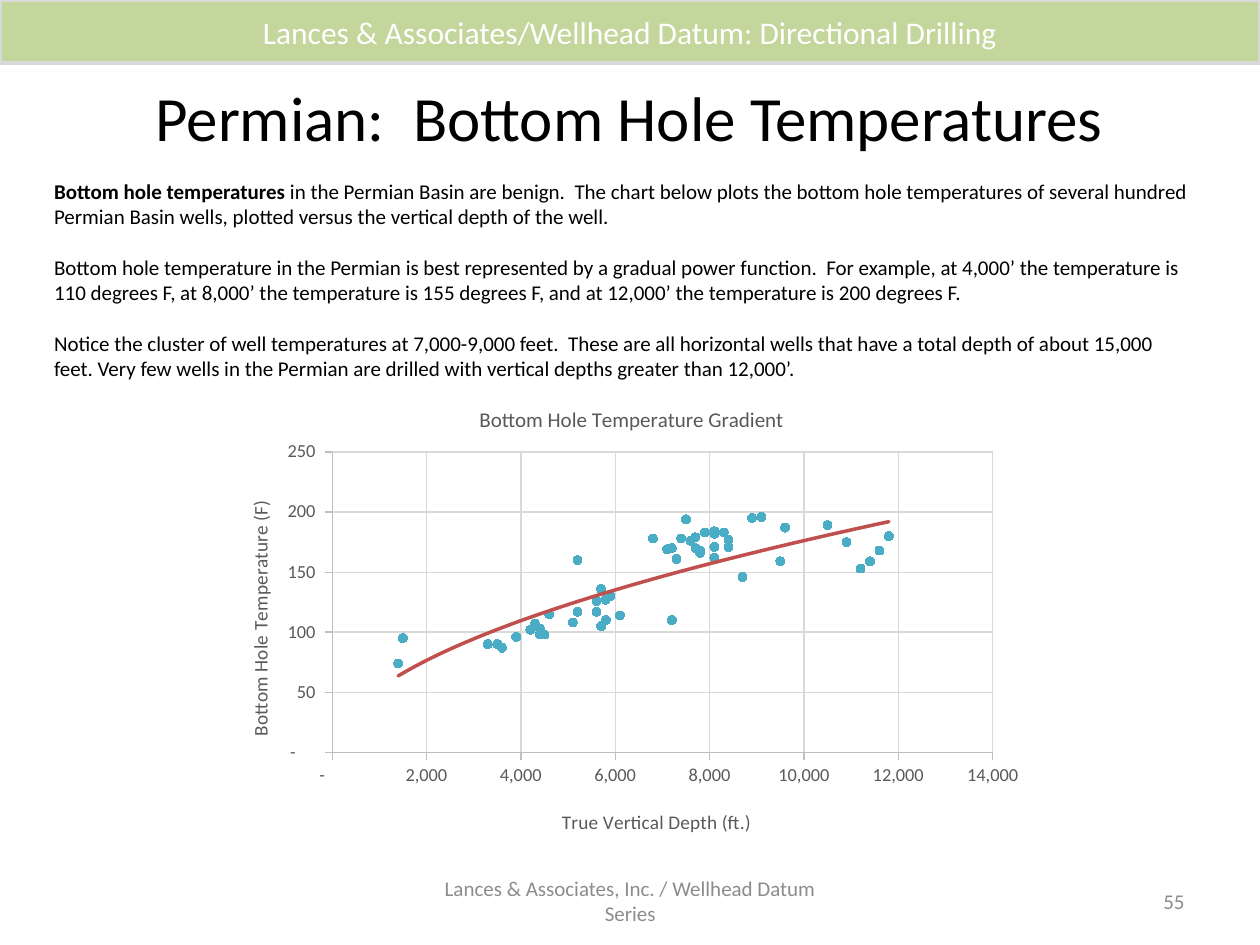
from lxml import etree
from pptx import Presentation
from pptx.chart.data import XyChartData
from pptx.dml.color import RGBColor
from pptx.enum.chart import XL_CHART_TYPE, XL_MARKER_STYLE, XL_TICK_MARK
from pptx.enum.shapes import MSO_SHAPE
from pptx.enum.text import MSO_ANCHOR, PP_ALIGN
from pptx.oxml import parse_xml
from pptx.oxml.ns import nsdecls, qn
from pptx.util import Cm, Pt

FONT = "Calibri"
BLACK = RGBColor(0x00, 0x00, 0x00)
WHITE = RGBColor(0xFF, 0xFF, 0xFF)
GREEN = RGBColor(0xC3, 0xD6, 0x9B)
TEAL = RGBColor(0x4B, 0xAC, 0xC6)
RED = RGBColor(0xC0, 0x50, 0x4D)
LABEL_GREY = RGBColor(0x59, 0x59, 0x59)
FOOTER_GREY = RGBColor(0x8C, 0x8C, 0x8C)
AXIS_GREY = RGBColor(0xBF, 0xBF, 0xBF)
GRID_GREY = RGBColor(0xD9, 0xD9, 0xD9)
LEFT, CENTER, RIGHT = PP_ALIGN.LEFT, PP_ALIGN.CENTER, PP_ALIGN.RIGHT
TOP, MIDDLE = MSO_ANCHOR.TOP, MSO_ANCHOR.MIDDLE
OUTSIDE = XL_TICK_MARK.OUTSIDE

# Content: each paragraph is a list of (text, bold) runs
BANNER = "Lances & Associates/Wellhead Datum: Directional Drilling"
TITLE = "Permian:  Bottom Hole Temperatures"
FOOTER = "Lances & Associates, Inc. / Wellhead Datum Series"
PAGE_NUMBER = "55"
BODY = [
    [("Bottom hole temperatures ", True),
     ("in the Permian Basin are benign.  The chart below plots the bottom hole "
      "temperatures of several hundred Permian Basin wells, plotted versus the "
      "vertical depth of the well.", False)],
    [("Bottom hole temperature in the Permian is best represented by a gradual "
      "power function.  For example, at 4,000’ the temperature is 110 degrees F, "
      "at 8,000’ the temperature is 155 degrees F, and at 12,000’ the temperature "
      "is 200 degrees F.", False)],
    [("Notice the cluster of well temperatures at 7,000-9,000 feet.  These are all "
      "horizontal wells that have a total depth of about 15,000 feet. Very few "
      "wells in the Permian are drilled with vertical depths greater than "
      "12,000’.", False)],
]
DEPTHS = [
    1400, 3600, 3300, 3500, 1500, 3900, 4400, 4500, 4200, 4400, 5700, 4300,
    5100, 7200, 5800, 6100, 6100, 4600, 5200, 5600, 5600, 5600, 5800, 5800,
    5800, 5900, 5700, 8700, 11200, 11400, 9500, 5200, 7300, 8100, 7800, 11600,
    7800, 7100, 7200, 7700, 8400, 8100, 10900, 7600, 8400, 7400, 6800, 7700,
    11800, 8100, 8300, 7900, 8100, 9600, 10500, 7500, 8900, 9100]
TEMPERATURES = [
    74, 87, 90, 90, 95, 96, 98, 98, 102, 103, 105, 107,
    108, 110, 110, 114, 114, 115, 117, 117, 126, 126, 127, 127,
    127, 130, 136, 146, 153, 159, 159, 160, 161, 162, 166, 168,
    168, 169, 170, 170, 171, 171, 175, 176, 177, 178, 178, 179,
    180, 182, 183, 183, 184, 187, 189, 194, 195, 196]
CHART_TITLE = "Bottom Hole Temperature Gradient"
DEPTH_TITLE = "True Vertical Depth (ft.)"
TEMPERATURE_TITLE = "Bottom Hole Temperature (F)"
NUMBER_FORMAT = '_(* #,##0_);_(* (#,##0);_(* "-"??_);_(@_)'


def style_font(font, size, color, bold=False):
    font.name, font.size, font.bold = FONT, Pt(size), bold
    font.color.rgb = color


def write(shape, paragraphs, size, color, align, anchor, gap=0):
    frame = shape.text_frame
    frame.word_wrap = True
    frame.vertical_anchor = anchor
    for index, runs in enumerate(paragraphs):
        para = frame.add_paragraph() if index else frame.paragraphs[0]
        para.alignment = align
        if index:
            para.space_before = Pt(gap)
        for text, bold in runs:
            span = para.add_run()
            span.text = text
            style_font(span.font, size, color, bold)


def set_layout(parent, after, values, inner=False):
    """Place a chart part by fractions of the chart's size."""
    for old in parent.findall(qn("c:layout")):
        parent.remove(old)
    layout = etree.Element(qn("c:layout"))
    manual = etree.SubElement(layout, qn("c:manualLayout"))
    settings = [("layoutTarget", "inner")] if inner else []
    settings += [("xMode", "edge"), ("yMode", "edge")]
    settings += list(zip("xywh", values))
    for tag, value in settings:
        etree.SubElement(manual, qn("c:" + tag)).set("val", str(value))
    if after is None:
        parent.insert(0, layout)
    else:
        after.addnext(layout)


def add_title(owner, text, size, position):
    title = owner.chart_title if hasattr(owner, "chart_title") else owner.axis_title
    span = title.text_frame.paragraphs[0].add_run()
    span.text = text
    style_font(span.font, size, LABEL_GREY)
    element = title._element
    set_layout(element, element.find(qn("c:tx")), position)


def style_axis(axis, maximum, step):
    axis.minimum_scale, axis.maximum_scale, axis.major_unit = 0, maximum, step
    axis.major_tick_mark = OUTSIDE
    axis.has_major_gridlines = True
    for line, color in ((axis.format.line, AXIS_GREY),
                        (axis.major_gridlines.format.line, GRID_GREY)):
        line.color.rgb = color
        line.width = Pt(0.75)
    labels = axis.tick_labels
    labels.number_format = NUMBER_FORMAT
    labels.number_format_is_linked = False
    style_font(labels.font, 10.5, LABEL_GREY)


def add_temperature_chart(page):
    data = XyChartData()
    wells = data.add_series("Series 1")
    for depth, temperature in zip(DEPTHS, TEMPERATURES):
        wells.add_data_point(depth, temperature)
    chart = page.shapes.add_chart(XL_CHART_TYPE.XY_SCATTER, Cm(4.24), Cm(7.62),
                                  Cm(16.71), Cm(9.58), data).chart
    chart.has_legend = False
    chart.has_title = True
    style_font(chart.font, 10, BLACK)
    chart.plots[0].vary_by_categories = False
    style_axis(chart.category_axis, 14000, 2000)
    style_axis(chart.value_axis, 250, 50)
    add_title(chart, CHART_TITLE, 12, (0.32, 0.05))
    add_title(chart.category_axis, DEPTH_TITLE, 11, (0.42, 0.9))
    add_title(chart.value_axis, TEMPERATURE_TITLE, 11, (0.04, 0.25))

    # Markers only, with a power trend line
    series = chart.plots[0].series[0]
    series.format.line.fill.background()
    series.smooth = False
    marker = series.marker
    marker.style, marker.size = XL_MARKER_STYLE.CIRCLE, 5
    marker.format.fill.solid()
    marker.format.fill.fore_color.rgb = TEAL
    marker.format.line.color.rgb = TEAL
    trend = parse_xml(
        f'<c:trendline {nsdecls("c", "a")}><c:spPr>'
        f'<a:ln w="{Pt(2)}" cap="rnd"><a:solidFill><a:srgbClr val="{RED}"/>'
        '</a:solidFill></a:ln></c:spPr><c:trendlineType val="power"/>'
        '<c:dispRSqr val="0"/><c:dispEq val="0"/></c:trendline>')
    element = series._element
    element.find(qn("c:xVal")).addprevious(trend)
    plot_area = element.getparent().getparent()
    set_layout(plot_area, None, (0.147, 0.156, 0.797, 0.632), inner=True)


def main():
    deck = Presentation()
    deck.slide_width, deck.slide_height = Cm(25.4), Cm(19.05)
    page = deck.slides.add_slide(deck.slide_layouts[6])

    # Banner across the top
    banner = page.shapes.add_shape(MSO_SHAPE.RECTANGLE, 0, 0, deck.slide_width, Cm(1.27))
    banner.shadow.inherit = False
    banner.fill.solid()
    banner.fill.fore_color.rgb = GREEN
    banner.line.color.rgb = GRID_GREY
    banner.line.width = Pt(2)
    write(banner, [[(BANNER, False)]], 18, WHITE, CENTER, MIDDLE)

    add_temperature_chart(page)

    # Text boxes: place in cm, paragraphs, size, colour, alignment, anchor, gap
    boxes = [
        ((0.84, 0.76, 23.7, 3.18), [[(TITLE, False)]], 36, BLACK, CENTER, MIDDLE, 0),
        ((0.84, 3.48, 23.5, 4.37), BODY, 12, BLACK, LEFT, TOP, 14.6),
        ((8.26, 17.65, 8.89, 1.02), [[(FOOTER, False)]], 12, FOOTER_GREY, CENTER, MIDDLE, 0),
        ((18.21, 17.65, 5.92, 1.02), [[(PAGE_NUMBER, False)]], 12, FOOTER_GREY, RIGHT, MIDDLE, 0),
    ]
    for place, *text in boxes:
        write(page.shapes.add_textbox(*map(Cm, place)), *text)

    deck.save("out.pptx")


if __name__ == "__main__":
    main()
